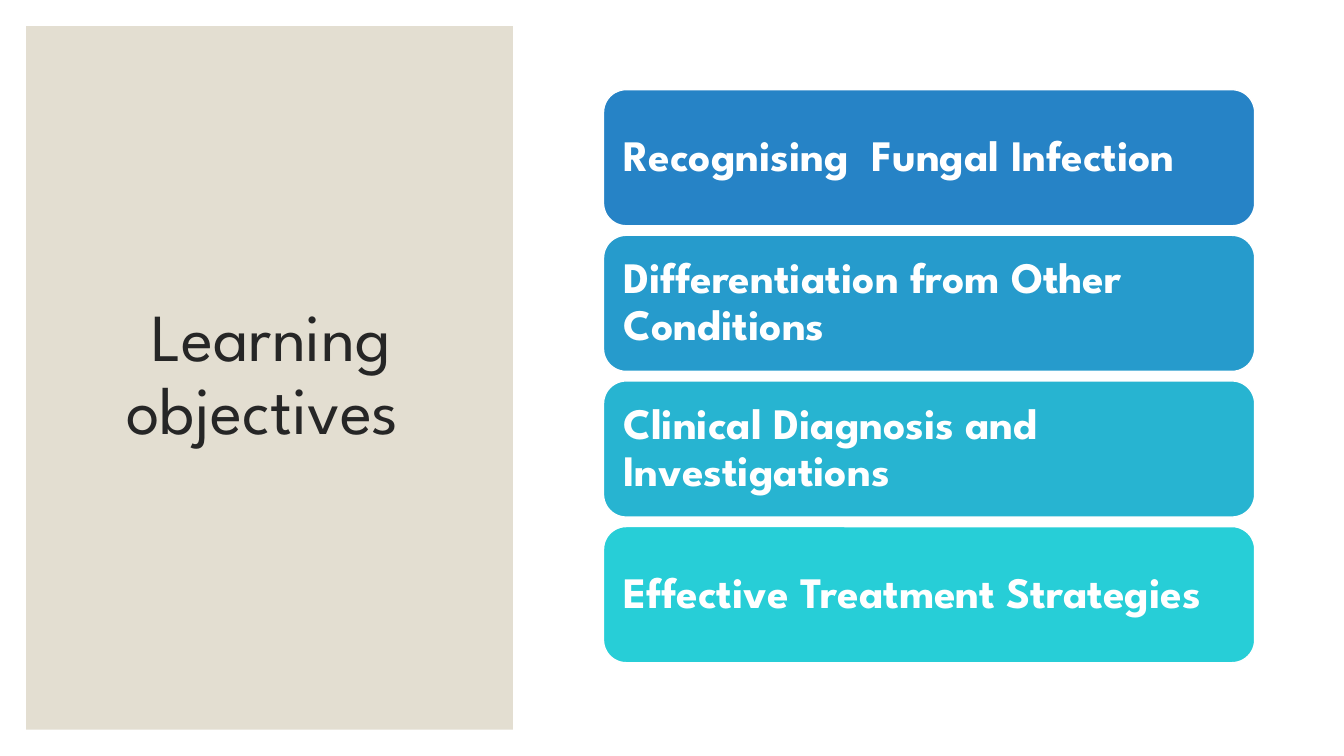
"""Build the learning objectives slide with a title panel and four cards."""
from dataclasses import dataclass

from pptx import Presentation
from pptx.dml.color import RGBColor
from pptx.enum.shapes import MSO_SHAPE
from pptx.enum.text import MSO_ANCHOR, PP_ALIGN
from pptx.shapes.autoshape import Shape
from pptx.slide import Slide
from pptx.util import Cm, Pt

RECT = MSO_SHAPE.RECTANGLE
ROUND = MSO_SHAPE.ROUNDED_RECTANGLE
MIDDLE = MSO_ANCHOR.MIDDLE
LEFT = PP_ALIGN.LEFT
CENTER = PP_ALIGN.CENTER


@dataclass(frozen=True)
class Theme:
    font: str = "League Spartan"
    white: str = "FFFFFF"
    sand: str = "E3DED1"
    ink: str = "262626"
    title: int = 48
    card: int = 31


@dataclass(frozen=True)
class Box:
    left: float
    top: float
    width: float
    height: float

    def place(self) -> tuple[Cm, Cm, Cm, Cm]:
        return Cm(self.left), Cm(self.top), Cm(self.width), Cm(self.height)


@dataclass(frozen=True)
class Card:
    text: str
    fill: str


THEME = Theme()
PANEL = Box(0.66, 0.66, 12.27, 17.73)
TITLE = Box(1.6, 1.55, 10.46, 15.85)
FIRST = Box(15.21, 2.26, 16.41, 3.43)
STEP = 3.67
INSET = 0.33
CARDS = [
    Card("Recognising  Fungal Infection", "2683C6"),
    Card("Differentiation from Other Conditions", "269BCC"),
    Card("Clinical Diagnosis and Investigations", "27B4D1"),
    Card("Effective Treatment Strategies", "27CED7"),
]


def color(code: str) -> RGBColor:
    return RGBColor.from_string(code)


def write(shape: Shape, text: str, *, size: int, ink: str, bold: bool = False,
          align: PP_ALIGN = LEFT, inset: float = 0.25) -> None:
    frame = shape.text_frame
    frame.word_wrap = True
    frame.vertical_anchor = MIDDLE
    frame.margin_left = frame.margin_right = Cm(inset)
    frame.margin_top = frame.margin_bottom = Cm(inset)
    para = frame.paragraphs[0]
    para.alignment = align
    para.line_spacing = 0.9
    run = para.add_run()
    run.text = text
    run.font.name = THEME.font
    run.font.size = Pt(size)
    run.font.bold = bold
    run.font.color.rgb = color(ink)


def block(slide: Slide, kind: MSO_SHAPE, box: Box, fill: str,
          line: str | None = None) -> Shape:
    shape = slide.shapes.add_shape(kind, *box.place())
    shape.shadow.inherit = False
    shape.fill.solid()
    shape.fill.fore_color.rgb = color(fill)
    if line:
        shape.line.color.rgb = color(line)
        shape.line.width = Pt(1)
    else:
        shape.line.fill.background()
    return shape


def main() -> None:
    deck = Presentation()
    deck.slide_width, deck.slide_height = Cm(33.87), Cm(19.05)
    slide = deck.slides.add_slide(deck.slide_layouts[6])
    slide.background.fill.solid()
    slide.background.fill.fore_color.rgb = color(THEME.white)

    block(slide, RECT, PANEL, THEME.sand)
    title = slide.shapes.add_textbox(*TITLE.place())
    write(title, "Learning objectives ", size=THEME.title, ink=THEME.ink,
          align=CENTER)

    for row, card in enumerate(CARDS):
        box = Box(FIRST.left, FIRST.top + row * STEP, FIRST.width, FIRST.height)
        shape = block(slide, ROUND, box, card.fill, THEME.white)
        write(shape, card.text, size=THEME.card, ink=THEME.white, bold=True,
              inset=INSET)

    deck.save("out.pptx")


if __name__ == "__main__":
    main()
